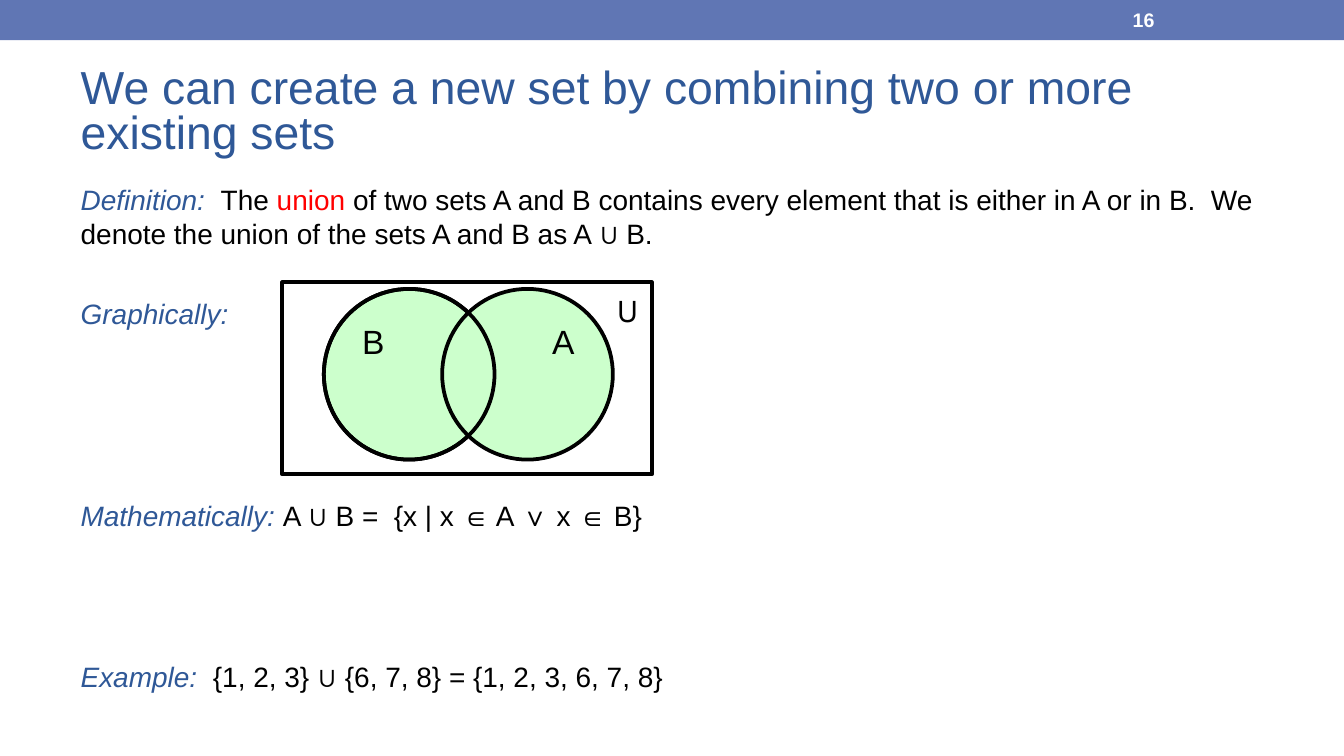
import pptx
import pptx.util
import pptx.dml.color
import pptx.enum.shapes
import pptx.enum.text
from lxml import etree

Inches, Pt = pptx.util.Inches, pptx.util.Pt
RGBColor = pptx.dml.color.RGBColor
SHAPES = pptx.enum.shapes.MSO_SHAPE
ALIGN = pptx.enum.text.PP_ALIGN
ANCHOR = pptx.enum.text.MSO_ANCHOR

BLACK = RGBColor(0x00, 0x00, 0x00)
WHITE = RGBColor(0xFF, 0xFF, 0xFF)
RED = RGBColor(0xFF, 0x00, 0x00)
NAVY = RGBColor(0x2F, 0x58, 0x97)
BAND_BLUE = RGBColor(0x60, 0x76, 0xB4)
PALE_GREEN = RGBColor(0xCC, 0xFF, 0xCC)

WIDTH = 10
HEIGHT = WIDTH * 9 / 16
MARGIN = 0.5
CONTENT_WIDTH = WIDTH - 2 * MARGIN
BODY_TOP = 1.31
ROW_PITCH, ROW_GAP = 21.6, 3.6  # points

TITLE = "We can create a new set by combining two or more existing sets"
# Empty rows above, label, then (text, colour) pieces
BODY = [
    (0, "Definition:  ", [
        ("The ", BLACK), ("union ", RED),
        ("of two sets A and B contains every element that is either in A or in B.  "
         "We denote the union of the sets A and B as A ∪ B.", BLACK)]),
    (1, "Graphically:", []),
    (4, "Mathematically: ", [("A ∪ B =  {x | x ∈ A ∨ x ∈ B}", BLACK)]),
    (3, "Example:  ", [("{1, 2, 3} ∪ {6, 7, 8} = {1, 2, 3, 6, 7, 8}", BLACK)]),
]

UNIVERSE = (2.1, 2.1, 2.75, 1.43)
DIAMETER, CIRCLE_TOP = 1.27, 2.15
CIRCLE_B = (2.41, CIRCLE_TOP, DIAMETER, DIAMETER)
CIRCLE_A = (3.29, CIRCLE_TOP, DIAMETER, DIAMETER)
# Preset, box, fill, letter, alignment, font; the last outline closes the overlap
VENN = [
    (SHAPES.RECTANGLE, UNIVERSE, WHITE, "U", ALIGN.RIGHT, "Karla"),
    (SHAPES.OVAL, CIRCLE_B, PALE_GREEN, "B", ALIGN.LEFT, "Arial"),
    (SHAPES.OVAL, CIRCLE_A, PALE_GREEN, "A", ALIGN.RIGHT, "Arial"),
    (SHAPES.OVAL, CIRCLE_B, None, "", ALIGN.LEFT, "Arial"),
]


def place(shape, left, top, width, height):
    shape.left, shape.top = Inches(left), Inches(top)
    shape.width, shape.height = Inches(width), Inches(height)


def set_font(font, size, color, name="Arial"):
    font.size, font.name, font.color.rgb = Pt(size), name, color


def add_shape(slide, preset, box, fill, line=None):
    shape = slide.shapes.add_shape(preset, *map(Inches, box))
    shape.shadow.inherit = False
    if fill is None:
        shape.fill.background()
    else:
        shape.fill.solid()
        shape.fill.fore_color.rgb = fill
    if line is None:
        shape.line.fill.background()
    else:
        shape.line.color.rgb = line
        shape.line.width = Pt(2)
    return shape


def remove_bullet(paragraph):
    properties = paragraph._p.get_or_add_pPr()
    properties.set("marL", "0")
    properties.set("indent", "0")
    etree.SubElement(properties, pptx.oxml.ns.qn("a:buNone"))


def fill_title(title):
    place(title, MARGIN, 0.44, CONTENT_WIDTH, 0.81)
    frame = title.text_frame
    frame.text = TITLE
    frame.auto_size = pptx.enum.text.MSO_AUTO_SIZE.NONE
    frame.vertical_anchor = ANCHOR.MIDDLE
    paragraph = frame.paragraphs[0]
    paragraph.alignment = ALIGN.LEFT
    paragraph.line_spacing = 0.8
    set_font(paragraph.font, 24.8, NAVY)


def fill_body(body):
    place(body, MARGIN, BODY_TOP, CONTENT_WIDTH, 4.3)
    frame = body.text_frame
    frame.auto_size = pptx.enum.text.MSO_AUTO_SIZE.NONE
    for index, (rows_above, label, pieces) in enumerate(BODY):
        paragraph = frame.add_paragraph() if index else frame.paragraphs[0]
        paragraph.space_before = Pt(ROW_GAP + rows_above * ROW_PITCH)
        remove_bullet(paragraph)
        for text, color in [(label, NAVY)] + pieces:
            run = paragraph.add_run()
            run.text = text
            set_font(run.font, 15, color)
            run.font.italic = color == NAVY


def add_venn(slide):
    for preset, box, fill, letter, alignment, font_name in VENN:
        shape = add_shape(slide, preset, box, fill, BLACK)
        if letter:
            frame = shape.text_frame
            frame.text = letter
            frame.vertical_anchor = ANCHOR.TOP
            paragraph = frame.paragraphs[0]
            paragraph.alignment = alignment
            set_font(paragraph.font, 18, BLACK, font_name)


def add_page_number(slide):
    box = slide.shapes.add_textbox(*map(Inches, (8.33, 0.01, 1.17, 0.27)))
    frame = box.text_frame
    frame.word_wrap = True
    frame.vertical_anchor = ANCHOR.MIDDLE
    frame.text = "16"
    font = frame.paragraphs[0].font
    set_font(font, 10.5, WHITE)
    font.bold = True


def main():
    presentation = pptx.Presentation()
    presentation.slide_width = Inches(WIDTH)
    presentation.slide_height = Inches(HEIGHT)
    slide = presentation.slides.add_slide(presentation.slide_layouts[1])
    add_shape(slide, SHAPES.RECTANGLE, (0, 0, WIDTH, 0.3), BAND_BLUE)
    fill_title(slide.shapes.title)
    fill_body(slide.placeholders[1])
    add_venn(slide)
    add_page_number(slide)
    presentation.save("out.pptx")


if __name__ == "__main__":
    main()
